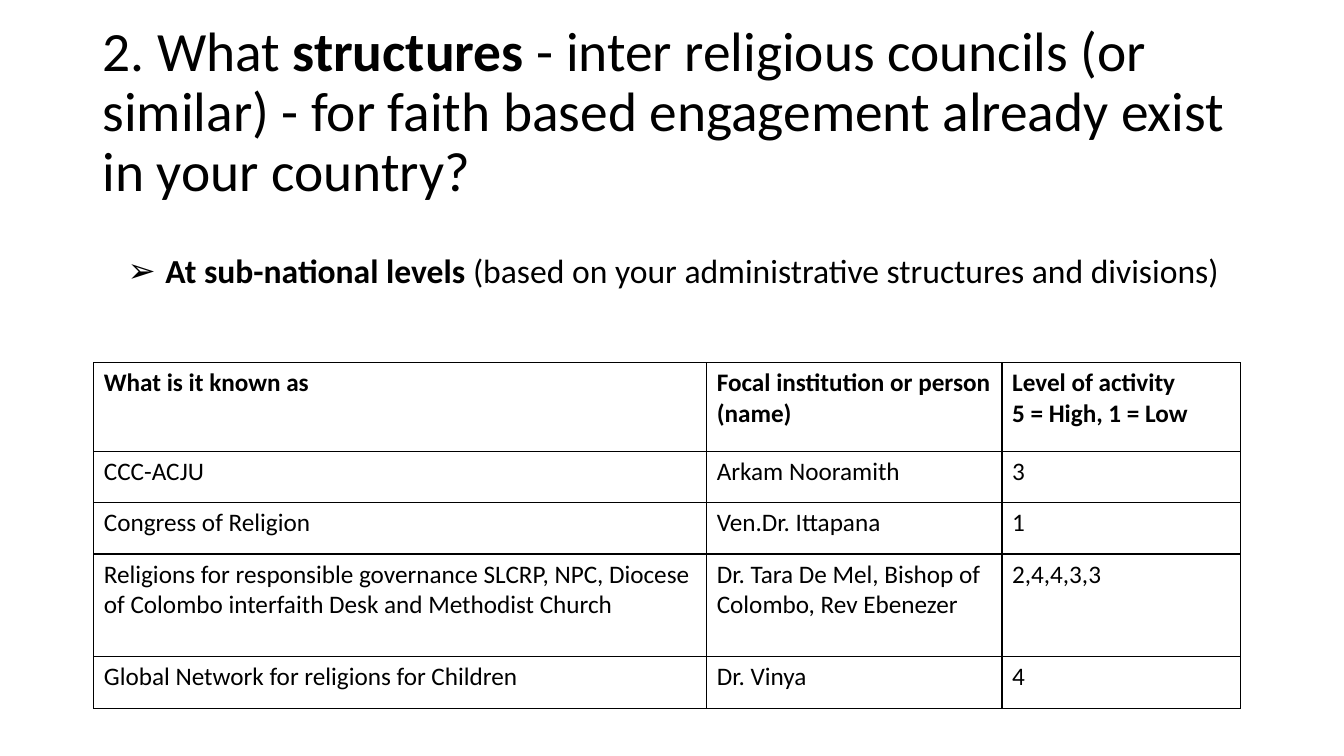
from dataclasses import dataclass

from lxml.etree import SubElement
from pptx import Presentation
from pptx.dml.color import RGBColor
from pptx.enum.text import MSO_ANCHOR as Anchor, MSO_AUTO_SIZE as AutoSize, PP_ALIGN as Align
from pptx.oxml.ns import qn
from pptx.util import Pt


@dataclass(frozen=True)
class Theme:
    font: str = "Calibri"
    ink: str = "000000"
    paper: str = "FFFFFF"
    title_size: float = 39.6
    bullet_size: float = 24
    table_size: float = 18
    border: float = 1
    line_spacing: float = 0.9


class SlideWriter:
    def __init__(self, slide, theme):
        self.slide = slide
        self.theme = theme

    def format_run(self, run, size, bold):
        run.font.name = self.theme.font
        run.font.size = Pt(size)
        run.font.bold = bold
        run.font.color.rgb = RGBColor.from_string(self.theme.ink)

    def placeholder(self, index, box, pieces, size, anchor):
        holder = self.slide.placeholders[index]
        holder.left, holder.top, holder.width, holder.height = map(Pt, box)
        frame = holder.text_frame
        frame.auto_size = AutoSize.NONE
        frame.vertical_anchor = anchor
        paragraph = frame.paragraphs[0]
        paragraph.alignment = Align.LEFT
        paragraph.line_spacing = self.theme.line_spacing
        for wording, bold in pieces:
            run = paragraph.add_run()
            run.text = wording
            self.format_run(run, size, bold)
        return paragraph

    def title(self, box, pieces):
        self.placeholder(0, box, pieces, self.theme.title_size, Anchor.MIDDLE)

    def bullet(self, box, pieces, symbol, margin, hanging):
        paragraph = self.placeholder(1, box, pieces, self.theme.bullet_size, Anchor.TOP)
        paragraph.level = 1
        paragraph.space_before = Pt(5)
        properties = paragraph._p.get_or_add_pPr()
        properties.set("marL", str(Pt(margin)))
        properties.set("indent", str(-Pt(hanging)))
        SubElement(properties, qn("a:buFont"), typeface="Arial")
        SubElement(properties, qn("a:buChar"), char=symbol)

    def cell_borders(self, cell):
        properties = cell._tc.get_or_add_tcPr()
        for side in ("a:lnL", "a:lnR", "a:lnT", "a:lnB"):
            line = SubElement(properties, qn(side), w=str(Pt(self.theme.border)))
            fill = SubElement(line, qn("a:solidFill"))
            SubElement(fill, qn("a:srgbClr"), val=self.theme.ink)

    def table(self, left, top, widths, heights, rows):
        grid = self.slide.shapes.add_table(
            len(rows), len(widths), Pt(left), Pt(top), Pt(sum(widths)), Pt(sum(heights))
        ).table
        grid.horz_banding = False
        grid.first_row = False
        for column, width in zip(grid.columns, widths):
            column.width = Pt(width)
        for row, height, (number, wordings) in zip(grid.rows, heights, enumerate(rows)):
            row.height = Pt(height)
            for cell, wording in zip(row.cells, wordings):
                self.cell_borders(cell)
                cell.fill.solid()
                cell.fill.fore_color.rgb = RGBColor.from_string(self.theme.paper)
                cell.text_frame.text = wording
                for paragraph in cell.text_frame.paragraphs:
                    for run in paragraph.runs:
                        self.format_run(run, self.theme.table_size, number == 0)


COUNCILS = [
    ("What is it known as", "Focal institution or person (name)",
     "Level of activity\n5 = High, 1 = Low"),
    ("CCC-ACJU", "Arkam Nooramith", "3"),
    ("Congress of Religion", "Ven.Dr. Ittapana", "1"),
    ("Religions for responsible governance SLCRP, NPC, Diocese of Colombo "
     "interfaith Desk and Methodist Church",
     "Dr. Tara De Mel, Bishop of Colombo, Rev Ebenezer", "2,4,4,3,3"),
    ("Global Network for religions for Children", "Dr. Vinya", "4"),
]


def main():
    deck = Presentation()
    deck.slide_width, deck.slide_height = Pt(960), Pt(540)
    writer = SlideWriter(deck.slides.add_slide(deck.slide_layouts[1]), Theme())

    writer.bullet(
        (66, 178.5, 828, 44),
        [("At sub-national levels", True),
         (" (based on your administrative structures and divisions)", False)],
        symbol="➢", margin=45, hanging=27,
    )
    single = 36.7
    writer.table(
        67, 259, widths=(437.8, 211, 170.6),
        heights=(63.4, single, single, 2 * single, single), rows=COUNCILS,
    )
    writer.title(
        (66, 29, 828, 104.4),
        [("2. What ", False), ("structures", True),
         (" - inter religious councils (or similar) - for faith based engagement "
          "already exist in your country?", False)],
    )
    deck.save("out.pptx")


if __name__ == "__main__":
    main()
